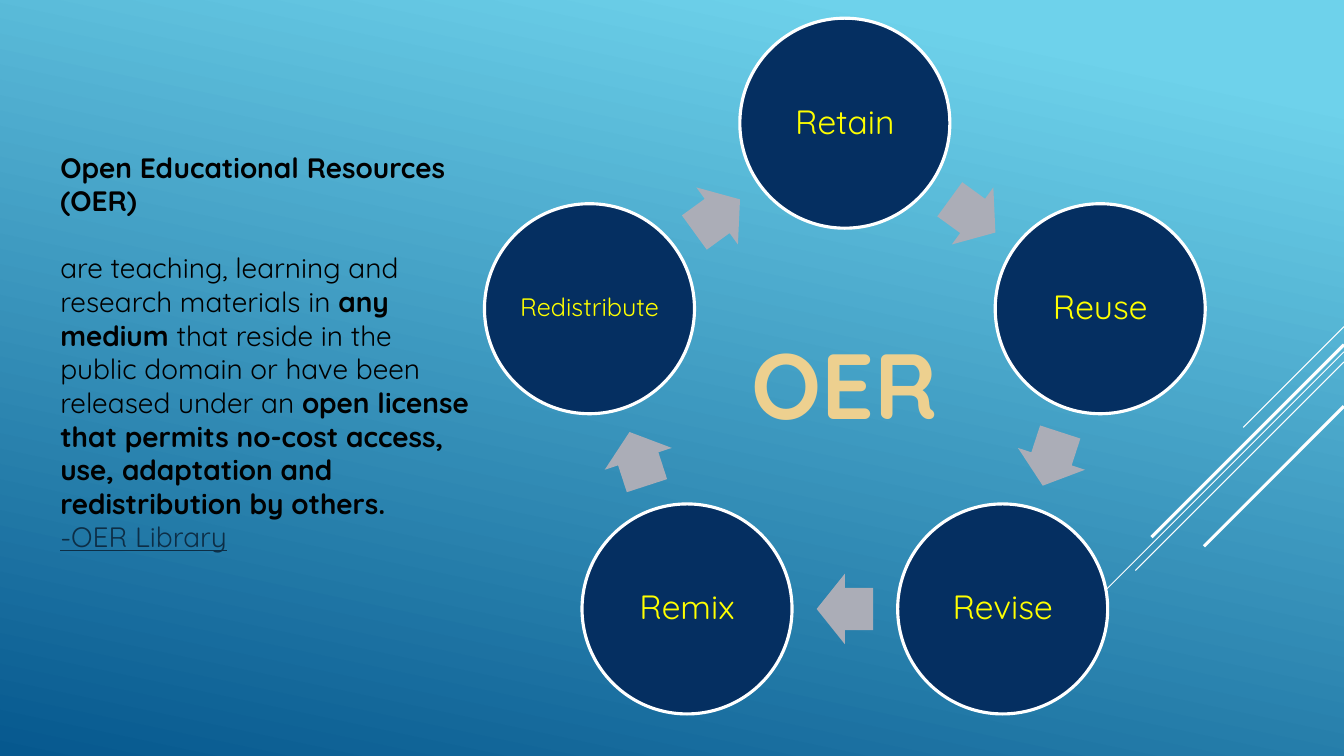
import math

import lxml.etree
import pptx
import pptx.dml.color
import pptx.enum.shapes
import pptx.enum.text
import pptx.oxml.ns
import pptx.util

Pt = pptx.util.Pt
RGBColor = pptx.dml.color.RGBColor
SHAPES = pptx.enum.shapes.MSO_SHAPE
qn = pptx.oxml.ns.qn

# Content: paragraphs are lists of (text, bold) runs
HEADING = [("Open Educational Resources (OER)\u00a0", True)]
DEFINITION = [
    ("are teaching, learning and research materials in ", False),
    ("any medium", True),
    (" that reside in the public domain or have been released under an ", False),
    ("open license that permits no-cost access, use, adaptation and "
     "redistribution by others.", True),
]
CREDIT = [("-OER Library", False)]
CYCLE = [("Retain", 24), ("Reuse", 24), ("Revise", 24), ("Remix", 24),
         ("Redistribute", 18)]
CENTER_LABEL = "OER"

# Diagonal lines from the right edge: start height, run, weight
STREAKS = [(233.3, 72, 0.75), (251.3, 235, 0.75), (258.5, 149, 0.75),
           (246.2, 137.5, 2.25), (290.2, 100, 2.25)]

FONT = "Quicksand"
SKY = RGBColor(0x6E, 0xD2, 0xEB)
OCEAN = RGBColor(0x06, 0x58, 0x8E)
NAVY = RGBColor(0x05, 0x2F, 0x61)
WHITE = RGBColor(0xFF, 0xFF, 0xFF)
BLACK = RGBColor(0, 0, 0)
YELLOW = RGBColor(0xFF, 0xFF, 0x00)
GRAY = RGBColor(0xAB, 0xAD, 0xB7)
LINK = RGBColor(0x0D, 0x2E, 0x46)
SAND = RGBColor(0xED, 0xD0, 0x8F)
BRONZE = RGBColor(0x9F, 0x76, 0x1A)

WIDTH, HEIGHT = 960, 540
CENTER_X, CENTER_Y, RING_RADIUS = 603.5, 279.8, 191.8
CIRCLE = 150
ARROW_WIDTH, ARROW_HEIGHT = 40.3, 50.4


def format_run(run, size, color, bold=False):
    run.font.name = FONT
    run.font.size = Pt(size)
    run.font.bold = bold
    run.font.color.rgb = color


def add_centered_shape(slide, kind, x, y, width, height, color):
    shape = slide.shapes.add_shape(kind, Pt(x - width / 2), Pt(y - height / 2),
                                   Pt(width), Pt(height))
    shape.shadow.inherit = False
    shape.fill.solid()
    shape.fill.fore_color.rgb = color
    return shape


def add_text_box(slide, left, top, width, height):
    box = slide.shapes.add_textbox(Pt(left), Pt(top), Pt(width), Pt(height))
    box.text_frame.word_wrap = True
    return box.text_frame


def add_background(slide):
    fill = slide.background.fill
    fill.gradient()
    fill.gradient_angle = 360 - 102
    for stop, color, position in zip(fill.gradient_stops, (SKY, OCEAN), (0.1, 1)):
        stop.color.rgb = color
        stop.position = position
    for start, run, weight in STREAKS:
        line = slide.shapes.add_connector(
            pptx.enum.shapes.MSO_CONNECTOR.STRAIGHT,
            Pt(WIDTH), Pt(start), Pt(WIDTH - run), Pt(start + run))
        line.line.color.rgb = WHITE
        line.line.width = Pt(weight)
        lxml.etree.SubElement(line._element.spPr, qn("a:effectLst"))


def add_cycle(slide):
    step = 360 / len(CYCLE)
    # Arrows sit midway between neighbouring circles
    arrow_radius = RING_RADIUS * math.cos(math.radians(step / 2))
    for index, (label, size) in enumerate(CYCLE):
        angle = math.radians(index * step)
        circle = add_centered_shape(
            slide, SHAPES.OVAL, CENTER_X + RING_RADIUS * math.sin(angle),
            CENTER_Y - RING_RADIUS * math.cos(angle), CIRCLE, CIRCLE, NAVY)
        circle.line.color.rgb = WHITE
        circle.line.width = Pt(2.25)
        frame = circle.text_frame
        frame.margin_left = frame.margin_right = Pt(2)
        frame.margin_top = frame.margin_bottom = Pt(2)
        frame.vertical_anchor = pptx.enum.text.MSO_ANCHOR.MIDDLE
        frame.text = label
        paragraph = frame.paragraphs[0]
        paragraph.alignment = pptx.enum.text.PP_ALIGN.CENTER
        paragraph.line_spacing = 0.9
        format_run(paragraph.runs[0], size, YELLOW)

        turn = (index + 0.5) * step
        angle = math.radians(turn)
        arrow = add_centered_shape(
            slide, SHAPES.RIGHT_ARROW, CENTER_X + arrow_radius * math.sin(angle),
            CENTER_Y - arrow_radius * math.cos(angle),
            ARROW_WIDTH, ARROW_HEIGHT, GRAY)
        arrow.adjustments[0] = 0.6
        arrow.adjustments[1] = 0.5
        arrow.line.fill.background()
        arrow.rotation = turn


def add_definition(slide):
    frame = add_text_box(slide, 36, 103.7, 307.4, 342)
    for index, parts in enumerate((HEADING, DEFINITION, CREDIT)):
        paragraph = frame.add_paragraph() if index else frame.paragraphs[0]
        for text, bold in parts:
            run = paragraph.add_run()
            run.text = text
            format_run(run, 20, BLACK, bold)
    frame.paragraphs[1].space_before = Pt(24)
    credit = frame.paragraphs[2].runs[0]
    credit.font.color.rgb = LINK
    credit.font.underline = True


def add_center_label(slide):
    frame = add_text_box(slide, 525.6, 230.4, 155.5, 87.1)
    frame.text = CENTER_LABEL
    paragraph = frame.paragraphs[0]
    paragraph.alignment = pptx.enum.text.PP_ALIGN.CENTER
    run = paragraph.runs[0]
    format_run(run, 66, SAND, True)
    # Letter outline
    outline = lxml.etree.Element(qn("a:ln"), w=str(Pt(1.75)))
    fill = lxml.etree.SubElement(outline, qn("a:solidFill"))
    lxml.etree.SubElement(fill, qn("a:srgbClr"), val=str(BRONZE))
    run.font._element.insert(0, outline)


def main():
    presentation = pptx.Presentation()
    presentation.slide_width = Pt(WIDTH)
    presentation.slide_height = Pt(HEIGHT)
    slide = presentation.slides.add_slide(presentation.slide_layouts[6])
    add_background(slide)
    add_cycle(slide)
    add_definition(slide)
    add_center_label(slide)
    presentation.save("out.pptx")


if __name__ == "__main__":
    main()
